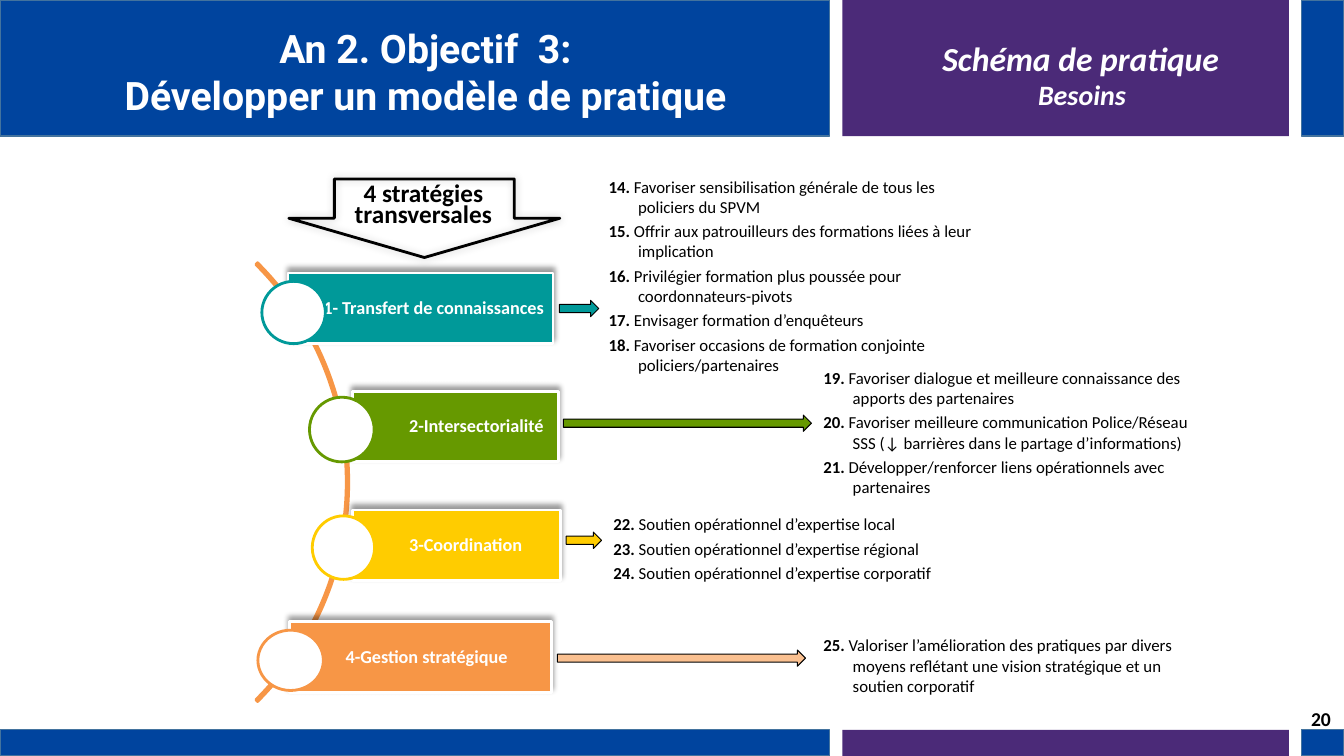
from dataclasses import dataclass
from itertools import count
from typing import Optional

from lxml.etree import SubElement
from pptx import Presentation
from pptx.dml.color import RGBColor
from pptx.enum.shapes import MSO_SHAPE
from pptx.enum.text import MSO_ANCHOR, PP_ALIGN
from pptx.oxml.ns import qn
from pptx.util import Cm, Pt

Box = tuple[float, float, float, float]


@dataclass(frozen=True)
class Theme:
    blue: str = "00449E"
    edge: str = "43739E"
    purple: str = "4B2A78"
    white: str = "FFFFFF"
    black: str = "000000"
    teal: str = "009999"
    green: str = "669900"
    yellow: str = "FFCC00"
    orange: str = "F79646"
    peach: str = "FAC090"
    body: str = "Calibri"
    head: str = "Roboto"
    title: int = 28
    topic: int = 24
    sub: int = 20
    lead: int = 18
    page: int = 14
    bar: int = 13
    need: int = 12


@dataclass(frozen=True)
class Label:
    box: Box
    lines: tuple[str, ...]
    size: int
    color: str
    font: str
    align: PP_ALIGN = PP_ALIGN.LEFT
    slant: bool = False
    wrap: bool = False
    pitch: Optional[int] = None


@dataclass(frozen=True)
class Step:
    name: str
    color: str
    tip: str
    bar: Box
    inset: float
    dot: Box
    arrow: Box
    list: Box
    needs: tuple[str, ...]


T = Theme()

LABELS = (
    Label((0.51, 0.48, 20.42, 2.64),
          ("An 2. Objectif  3:", "Développer un modèle de pratique"),
          T.title, T.white, T.head, PP_ALIGN.CENTER, wrap=True),
    Label((23.5, 0.84, 7.54, 1.27), ("Schéma de pratique",),
          T.topic, T.white, T.body, slant=True),
    Label((25.91, 1.83, 2.74, 1.12), ("Besoins",),
          T.sub, T.white, T.body, slant=True),
    Label((7.8, 4.57, 5.74, 1.96), ("4 stratégies", "transversales"),
          T.lead, T.black, T.body, PP_ALIGN.CENTER, wrap=True, pitch=15),
    Label((32.79, 17.7, 1.08, 0.86), ("20",), T.page, T.black, T.body),
)

STEPS = (
    Step("1- Transfert de connaissances", T.teal, T.teal,
         (7.26, 6.88, 6.68, 1.78), 0.89, (6.6, 7.09, 1.6, 1.57),
         (14.1, 7.57, 0.99, 0.41), (15.09, 4.32, 9.86, 5.31),
         ("Favoriser sensibilisation générale de tous les policiers du SPVM",
          "Offrir aux patrouilleurs des formations liées à leur implication",
          "Privilégier formation plus poussée pour coordonnateurs-pivots",
          "Envisager formation d’enquêteurs",
          "Favoriser occasions de formation conjointe policiers/partenaires")),
    Step("2-Intersectorialité", T.green, T.green,
         (8.89, 9.86, 5.18, 1.78), 1.42, (7.8, 10.01, 1.63, 1.63),
         (14.2, 10.46, 6.25, 0.41), (20.5, 9.14, 9.86, 3.56),
         ("Favoriser dialogue et meilleure connaissance des apports des partenaires",
          "Favoriser meilleure communication Police/Réseau SSS "
          "(↓ barrières dans le partage d’informations)",
          "Développer/renforcer liens opérationnels avec partenaires")),
    Step("3-Coordination", T.yellow, T.yellow,
         (8.89, 12.85, 5.23, 1.78), 1.42, (7.87, 13, 1.57, 1.6),
         (14.27, 13.41, 0.89, 0.41), (15.21, 12.83, 9.86, 2.01),
         ("Soutien opérationnel d’expertise local",
          "Soutien opérationnel d’expertise régional",
          "Soutien opérationnel d’expertise corporatif")),
    Step("4-Gestion stratégique", T.orange, T.peach,
         (7.29, 15.67, 6.6, 1.78), 1.42, (6.5, 15.88, 1.65, 1.52),
         (14.05, 16.38, 6.25, 0.41), (20.5, 15.88, 9.86, 1.8),
         ("Valoriser l’amélioration des pratiques par divers moyens reflétant "
          "une vision stratégique et un soutien corporatif",)),
)


def draw(slide, kind: MSO_SHAPE, box: Box, fill: Optional[str],
         line: Optional[str] = None, width: float = 1):
    shape = slide.shapes.add_shape(kind, *map(Cm, box))
    shape.shadow.inherit = False
    if fill:
        shape.fill.solid()
        shape.fill.fore_color.rgb = RGBColor.from_string(fill)
    else:
        shape.fill.background()
    if line:
        shape.line.color.rgb = RGBColor.from_string(line)
        shape.line.width = Pt(width)
    else:
        shape.line.fill.background()
    return shape


def shade(shape, alpha: int, blur: float, gap: float, angle: int) -> None:
    group = shape._element.spPr.find(qn("a:effectLst"))
    outer = SubElement(group, qn("a:outerShdw"), blurRad=str(Pt(blur)),
                       dist=str(Pt(gap)), dir=str(angle * 60000), rotWithShape="0")
    color = SubElement(outer, qn("a:srgbClr"), val=T.black)
    SubElement(color, qn("a:alpha"), val=str(alpha * 1000))


def style(part, size: int, color: str, font: str = T.body,
          bold: bool = True, slant: bool = False) -> None:
    face = part.font
    face.name, face.size, face.bold, face.italic = font, Pt(size), bold, slant
    face.color.rgb = RGBColor.from_string(color)


def write(slide, label: Label) -> None:
    frame = slide.shapes.add_textbox(*map(Cm, label.box)).text_frame
    frame.word_wrap = label.wrap
    frame.text = "\n".join(label.lines)
    for para in frame.paragraphs:
        para.alignment = label.align
        if label.pitch:
            para.line_spacing = Pt(label.pitch)
        style(para, label.size, label.color, label.font, slant=label.slant)


def mark(slide, step: Step) -> None:
    bar = draw(slide, MSO_SHAPE.RECTANGLE, step.bar, step.color, T.white, 2)
    shade(bar, 40, 4, 3, 270)
    frame = bar.text_frame
    frame.word_wrap = True
    frame.vertical_anchor = MSO_ANCHOR.MIDDLE
    frame.margin_left = Cm(step.inset)
    frame.margin_top = frame.margin_right = frame.margin_bottom = Cm(0.1)
    frame.text = step.name
    para = frame.paragraphs[0]
    para.alignment = PP_ALIGN.LEFT
    para.line_spacing = 0.9
    style(para, T.bar, T.white)
    draw(slide, MSO_SHAPE.OVAL, step.dot, T.white, step.color, 2)
    draw(slide, MSO_SHAPE.RIGHT_ARROW, step.arrow, step.tip, T.black, 0.75)


def fill_list(slide, step: Step, index: count) -> None:
    frame = slide.shapes.add_textbox(*map(Cm, step.list)).text_frame
    frame.word_wrap = True
    for place, need in enumerate(step.needs):
        para = frame.add_paragraph() if place else frame.paragraphs[0]
        para.space_after = Pt(3)
        props = para._p.get_or_add_pPr()
        props.set("marL", str(Cm(0.74)))
        props.set("indent", str(-Cm(0.74)))
        for text, bold in ((f"{next(index)}.", True), (f" {need}", False)):
            run = para.add_run()
            run.text = text
            style(run, T.need, T.black, bold=bold)


def main() -> None:
    deck = Presentation()
    deck.slide_width, deck.slide_height = Cm(33.87), Cm(19.05)
    slide = deck.slides.add_slide(deck.slide_layouts[6])

    for top, height in ((18.39, 0.66), (0, 3.43)):
        for left, width, fill, line in ((0, 20.9, T.blue, T.edge),
                                        (21.23, 11.25, T.purple, None),
                                        (32.8, 1.07, T.blue, T.edge)):
            draw(slide, MSO_SHAPE.RECTANGLE, (left, top, width, height), fill, line)

    arc = draw(slide, MSO_SHAPE.BLOCK_ARC, (-6.86, 4.34, 15.65, 15.62),
               None, T.orange, 2)
    for place, value in enumerate((189, 27, 0.004)):
        arc.adjustments[place] = value

    for step in STEPS:
        mark(slide, step)

    arrow = draw(slide, MSO_SHAPE.DOWN_ARROW, (7.28, 4.51, 6.83, 1.98),
                 None, T.black, 2)
    arrow.adjustments[0] = 0.664
    shade(arrow, 20, 6, 0, 225)

    index = count(14)
    for step in STEPS:
        fill_list(slide, step, index)
    for label in LABELS:
        write(slide, label)

    deck.save("out.pptx")


if __name__ == "__main__":
    main()
